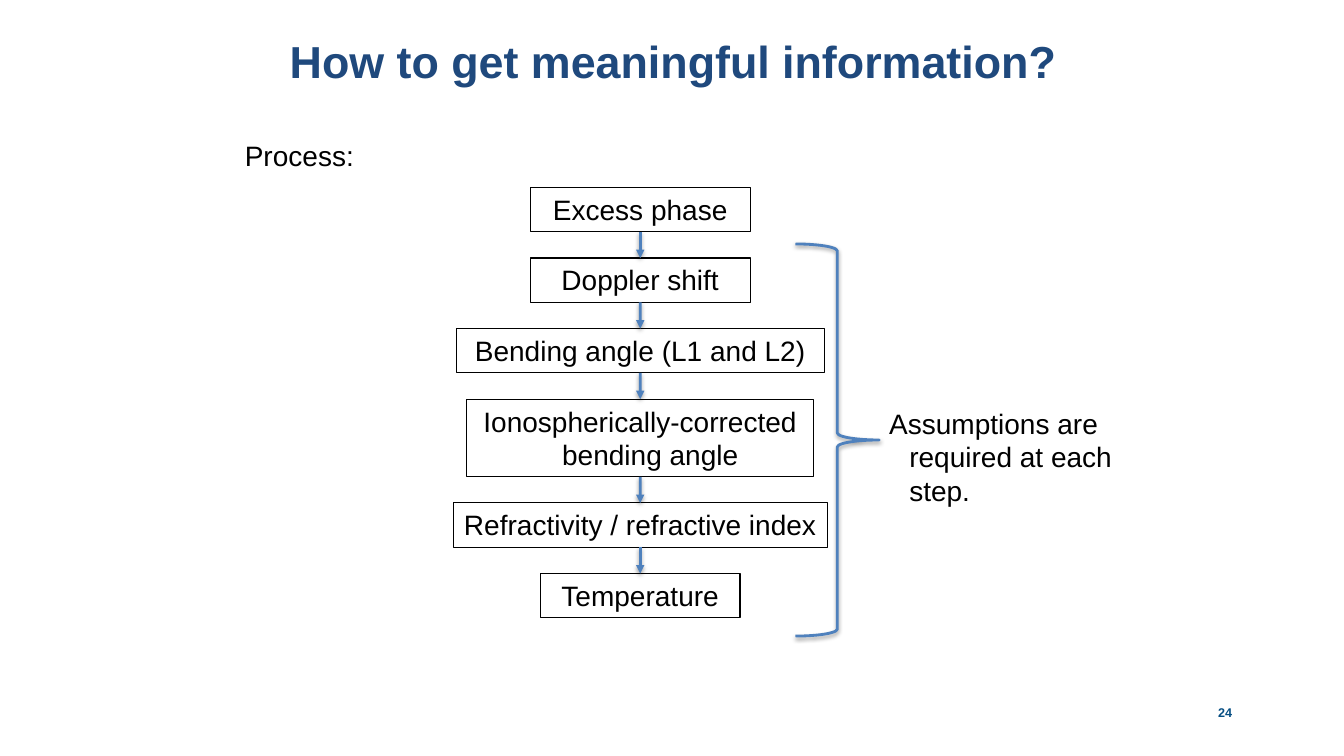
from dataclasses import dataclass

from pptx import Presentation
from pptx.dml.color import RGBColor
from pptx.enum.shapes import MSO_CONNECTOR, MSO_SHAPE
from pptx.enum.text import MSO_ANCHOR, MSO_AUTO_SIZE, PP_ALIGN
from pptx.oxml import parse_xml
from pptx.oxml.ns import nsdecls
from pptx.util import Inches, Pt


@dataclass(frozen=True)
class Theme:
    font: str = "Arial"
    title: RGBColor = RGBColor(0x1F, 0x49, 0x7D)
    ink: RGBColor = RGBColor(0, 0, 0)
    accent: RGBColor = RGBColor(0x4F, 0x81, 0xBD)
    number: RGBColor = RGBColor(0x06, 0x4E, 0x83)
    title_size: int = 32
    body_size: int = 20
    number_size: int = 9


class SlideBuilder:
    def __init__(self, page, theme):
        self.page = page
        self.theme = theme

    def set_text(self, box, text, size, color, bold=False, hanging=0, frame=None, paragraph=None):
        """Fill a shape's text frame with one formatted paragraph."""
        text_frame = box.text_frame
        para = text_frame.paragraphs[0]
        span = para.add_run()
        span.text = text
        frame_format = {
            "auto_size": MSO_AUTO_SIZE.NONE,
            "word_wrap": True,
            "vertical_anchor": MSO_ANCHOR.TOP,
            **(frame or {}),
        }
        font_format = {"name": self.theme.font, "size": Pt(size), "bold": bold}
        for target, values in (
            (text_frame, frame_format),
            (para, paragraph or {}),
            (span.font, font_format),
        ):
            for name, value in values.items():
                setattr(target, name, value)
        span.font.color.rgb = color
        if hanging:
            properties = para._p.get_or_add_pPr()
            properties.set("marL", str(Inches(hanging)))
            properties.set("indent", str(-Inches(hanging)))

    def title(self, text, left, top, width, height):
        box = self.page.shapes.title
        place = {"left": left, "top": top, "width": width, "height": height}
        for name, value in place.items():
            setattr(box, name, Inches(value))
        self.set_text(box, text, self.theme.title_size, self.theme.title, bold=True,
                      paragraph={"alignment": PP_ALIGN.CENTER, "line_spacing": Pt(28)})

    def label(self, text, left, top, width, height):
        box = self.page.shapes.add_textbox(*map(Inches, (left, top, width, height)))
        self.set_text(box, text, self.theme.body_size, self.theme.ink, hanging=0.2)

    def page_number(self, text, left, top, width, height):
        box = self.page.shapes.add_textbox(*map(Inches, (left, top, width, height)))
        margins = dict.fromkeys(
            ("margin_left", "margin_top", "margin_right", "margin_bottom"), 0)
        self.set_text(box, text, self.theme.number_size, self.theme.number, bold=True,
                      frame={**margins, "vertical_anchor": MSO_ANCHOR.BOTTOM},
                      paragraph={"alignment": PP_ALIGN.CENTER})

    def step(self, text, left, top, width, height):
        box = self.page.shapes.add_shape(
            MSO_SHAPE.RECTANGLE, *map(Inches, (left, top, width, height)))
        box.shadow.inherit = False
        box.fill.background()
        box.line.color.rgb = self.theme.ink
        box.line.width = Pt(0.75)
        self.set_text(box, text, self.theme.body_size, self.theme.ink, hanging=0.2,
                      frame={"margin_left": Inches(0.05), "margin_right": Inches(0.05)},
                      paragraph={"alignment": PP_ALIGN.CENTER})
        return box

    def accent_line(self, shape):
        """Give a shape the blue outline and its soft shadow."""
        shape.line.color.rgb = self.theme.accent
        shape.line.width = Pt(2)
        shape.element.spPr.append(parse_xml(
            f'<a:effectLst {nsdecls("a")}>'
            f'<a:outerShdw blurRad="{Pt(3.1)}" dist="{Pt(1.6)}" dir="5400000" rotWithShape="0">'
            '<a:srgbClr val="000000"><a:alpha val="38000"/></a:srgbClr>'
            '</a:outerShdw></a:effectLst>'))

    def arrow(self, upper, lower):
        connector = self.page.shapes.add_connector(MSO_CONNECTOR.STRAIGHT, 0, 0, 0, 0)
        connector.begin_connect(upper, 2)
        connector.end_connect(lower, 0)
        self.accent_line(connector)
        connector.line._get_or_add_ln().append(
            parse_xml(f'<a:tailEnd {nsdecls("a")} type="triangle"/>'))

    def brace(self, left, top, width, height):
        shape = self.page.shapes.add_shape(
            MSO_SHAPE.RIGHT_BRACE, *map(Inches, (left, top, width, height)))
        shape.fill.background()
        self.accent_line(shape)


# Process steps: text, width, height
STEPS = [
    ("Excess phase", 2.18, 0.44),
    ("Doppler shift", 2.18, 0.44),
    ("Bending angle (L1 and L2)", 3.65, 0.44),
    ("Ionospherically-corrected bending angle", 3.44, 0.77),
    ("Refractivity / refractive index", 3.71, 0.44),
    ("Temperature", 1.98, 0.44),
]
STEP_CENTER = 6.35
FIRST_STEP_TOP = 1.86
STEP_GAP = 0.26


def main():
    deck = Presentation()
    deck.slide_width = Inches(13.33)
    deck.slide_height = Inches(7.5)
    builder = SlideBuilder(deck.slides.add_slide(deck.slide_layouts[5]), Theme())

    # Title, heading and page number
    builder.title("How to get meaningful information?", 2.18, 0.43, 9, 1.25)
    builder.label("Process:", 2.33, 1.33, 1.4, 0.44)
    builder.page_number("24", 10.97, 6.9, 2.36, 0.24)

    # Chain of steps, centred on one axis
    boxes = []
    top = FIRST_STEP_TOP
    for text, width, height in STEPS:
        boxes.append(builder.step(text, STEP_CENTER - width / 2, top, width, height))
        top += height + STEP_GAP
    for upper, lower in zip(boxes, boxes[1:]):
        builder.arrow(upper, lower)

    # Remark on the steps
    builder.brace(7.89, 2.42, 0.83, 3.89)
    builder.label("Assumptions are required at each step.", 8.72, 3.98, 3, 0.77)

    deck.save("out.pptx")


if __name__ == "__main__":
    main()
